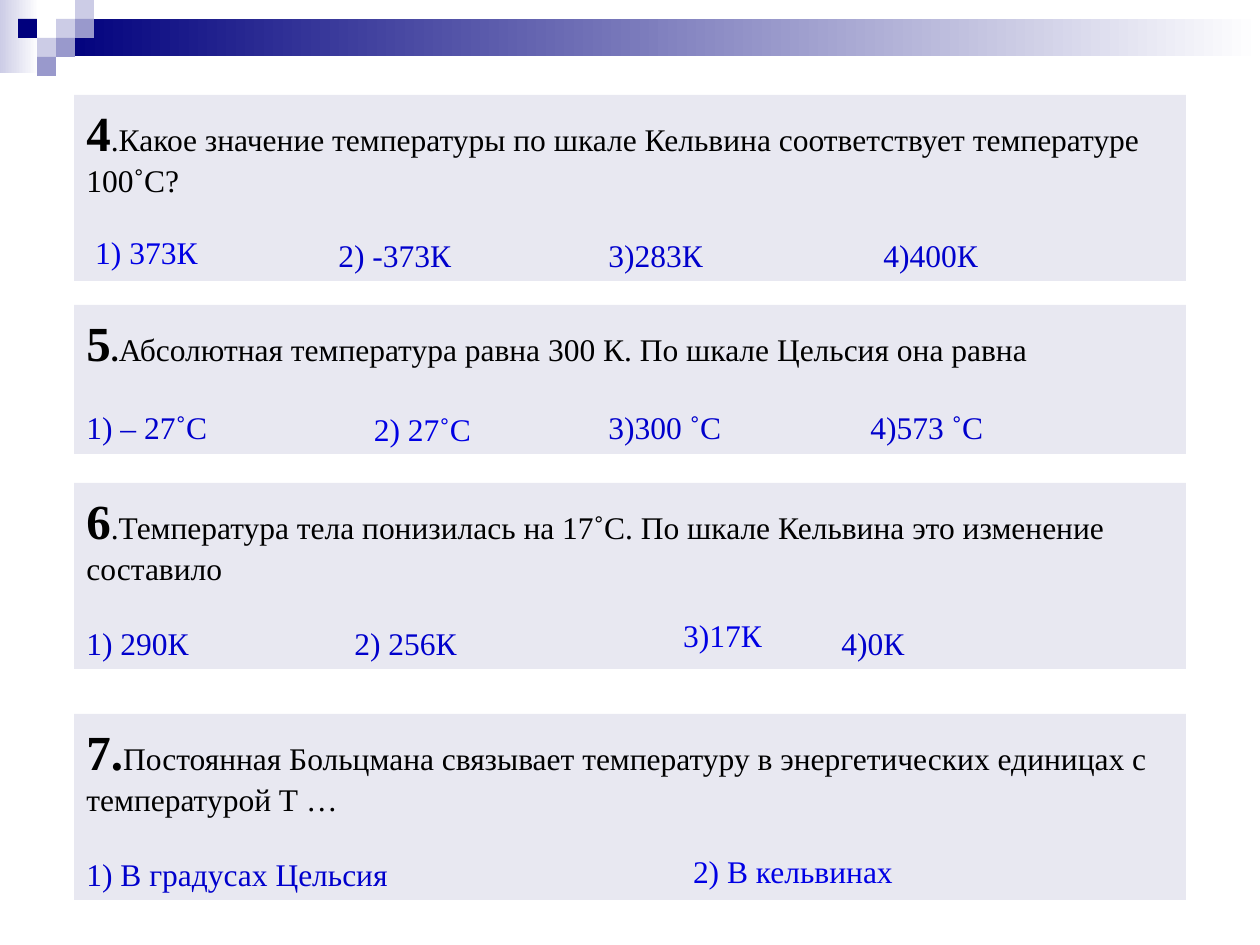
import pptx
import pptx.util
import pptx.dml.color
import pptx.enum.shapes
import pptx.enum.text
import lxml.etree

EMU_PER_PX = 914400 / 126
FONT = "Times New Roman"
COLORS = {
    "navy": "00007D", "violet": "9999CC", "lilac": "CCCCE6", "white": "FFFFFF",
    "card": "E8E8F1", "question": "000000", "answer": "0000CC", "loose": "0000E4",
}
NUMBER = {"size": 28, "bold": True, "color": "question"}
DOT = {"size": 18, "bold": True, "color": "question"}
QUESTION = {"size": 18, "bold": False, "color": "question"}
ANSWER = {"size": 18, "bold": False, "color": "answer"}
LOOSE = {"size": 18, "bold": False, "color": "loose"}

# Box, question runs, answer line, tab stops from the text edge
CARDS = [
    ((74, 95, 1112, 186),
     [("4", NUMBER), (".Какое значение температуры по шкале Кельвина соответствует "
                      "температуре 100˚С?", QUESTION)],
     "\t2) -373К\t3)283К\t4)400К", (252, 522, 797)),
    ((74, 305, 1112, 149),
     [("5", NUMBER), (".", DOT),
      ("Абсолютная температура равна 300 К. По шкале Цельсия она равна", QUESTION)],
     "1) – 27˚С\t3)300 ˚С\t4)573 ˚С", (522, 784)),
    ((74, 483, 1112, 186),
     [("6", NUMBER), (".Температура тела понизилась на 17˚С. По шкале Кельвина "
                      "это изменение составило", QUESTION)],
     "1) 290К\t2) 256К\t4)0К", (268, 755)),
    ((74, 714, 1112, 186),
     [("7.", NUMBER), ("Постоянная Больцмана связывает температуру в энергетических "
                       "единицах с температурой Т …", QUESTION)],
     "1) В градусах Цельсия", ()),
]
LOOSE_ANSWERS = [
    ((78, 227, 137, 50), "1) 373К", True),
    ((354, 404, 137, 50), "2) 27˚С", True),
    ((669, 610, 107, 50), "3)17К", False),
    ((679, 846, 228, 50), "2) В кельвинах", False),
]


def px(value):
    return pptx.util.Emu(round(value * EMU_PER_PX))


def rgb(name):
    return pptx.dml.color.RGBColor.from_string(COLORS[name])


def add_rectangle(slide, box, *colors):
    """One colour gives a solid fill, two give a left-to-right gradient."""
    shape = slide.shapes.add_shape(
        pptx.enum.shapes.MSO_SHAPE.RECTANGLE, *map(px, box))
    shape.shadow.inherit = False
    shape.line.fill.background()
    if len(colors) == 1:
        shape.fill.solid()
        shape.fill.fore_color.rgb = rgb(colors[0])
    else:
        shape.fill.gradient()
        shape.fill.gradient_angle = 0
        for stop, position, color in zip(shape.fill.gradient_stops, (0, 1), colors):
            stop.position = position
            stop.color.rgb = rgb(color)
    return shape


def add_run(paragraph, text, style):
    run = paragraph.add_run()
    run.text = text
    formats = {"name": FONT, "size": pptx.util.Pt(style["size"]), "bold": style["bold"]}
    for attribute, value in formats.items():
        setattr(run.font, attribute, value)
    run.font.color.rgb = rgb(style["color"])


def add_tab_stops(paragraph, stops):
    namespace = "{http://schemas.openxmlformats.org/drawingml/2006/main}"
    properties = paragraph._p.get_or_add_pPr()
    tab_list = lxml.etree.SubElement(properties, namespace + "tabLst")
    for stop in stops:
        lxml.etree.SubElement(tab_list, namespace + "tab", pos=str(px(stop)), algn="l")


def add_header(slide, box):
    """Gradient bars with a checkered corner."""
    left, top, width, _ = box
    add_rectangle(slide, (left, top, 39, 73), "lilac", "white")
    add_rectangle(slide, (left + 57, top + 19, width - 57, 37), "navy", "white")
    cell = 19
    squares = [(3, 1, "lilac"), (4, 0, "lilac"), (4, 1, "violet"), (2, 2, "lilac"),
               (1, 1, "navy"), (3, 2, "violet"), (2, 3, "violet")]
    for column, row, color in squares:
        add_rectangle(slide, (left + column * cell - 1, top + row * cell, cell, cell), color)


def add_card(slide, box, question, answers, stops):
    """Question panel with its answer line."""
    frame = add_rectangle(slide, box, "card").text_frame
    formats = {"word_wrap": True,
               "vertical_anchor": pptx.enum.text.MSO_ANCHOR.MIDDLE,
               "auto_size": pptx.enum.text.MSO_AUTO_SIZE.SHAPE_TO_FIT_TEXT}
    for attribute, value in formats.items():
        setattr(frame, attribute, value)
    question_paragraph = frame.paragraphs[0]
    answer_paragraph = frame.add_paragraph()
    for paragraph in (question_paragraph, answer_paragraph):
        paragraph.alignment = pptx.enum.text.PP_ALIGN.LEFT
    for text, style in question:
        add_run(question_paragraph, text, style)
    answer_paragraph.space_before = pptx.util.Pt(21)
    if stops:
        add_tab_stops(answer_paragraph, stops)
    add_run(answer_paragraph, answers, ANSWER)


def add_loose_answer(slide, box, text, wrap):
    """Answer in a text box of its own."""
    frame = slide.shapes.add_textbox(*map(px, box)).text_frame
    frame.word_wrap = wrap
    frame.auto_size = pptx.enum.text.MSO_AUTO_SIZE.SHAPE_TO_FIT_TEXT
    paragraph = frame.paragraphs[0]
    paragraph.alignment = pptx.enum.text.PP_ALIGN.CENTER
    add_run(paragraph, text, LOOSE)


def main():
    presentation = pptx.Presentation()
    presentation.slide_width, presentation.slide_height = px(1260), px(945)
    slide = presentation.slides.add_slide(presentation.slide_layouts[6])
    add_header(slide, (0, 0, 1260, 75))
    for card in CARDS:
        add_card(slide, *card)
    for answer in LOOSE_ANSWERS:
        add_loose_answer(slide, *answer)
    presentation.save("out.pptx")


if __name__ == "__main__":
    main()
